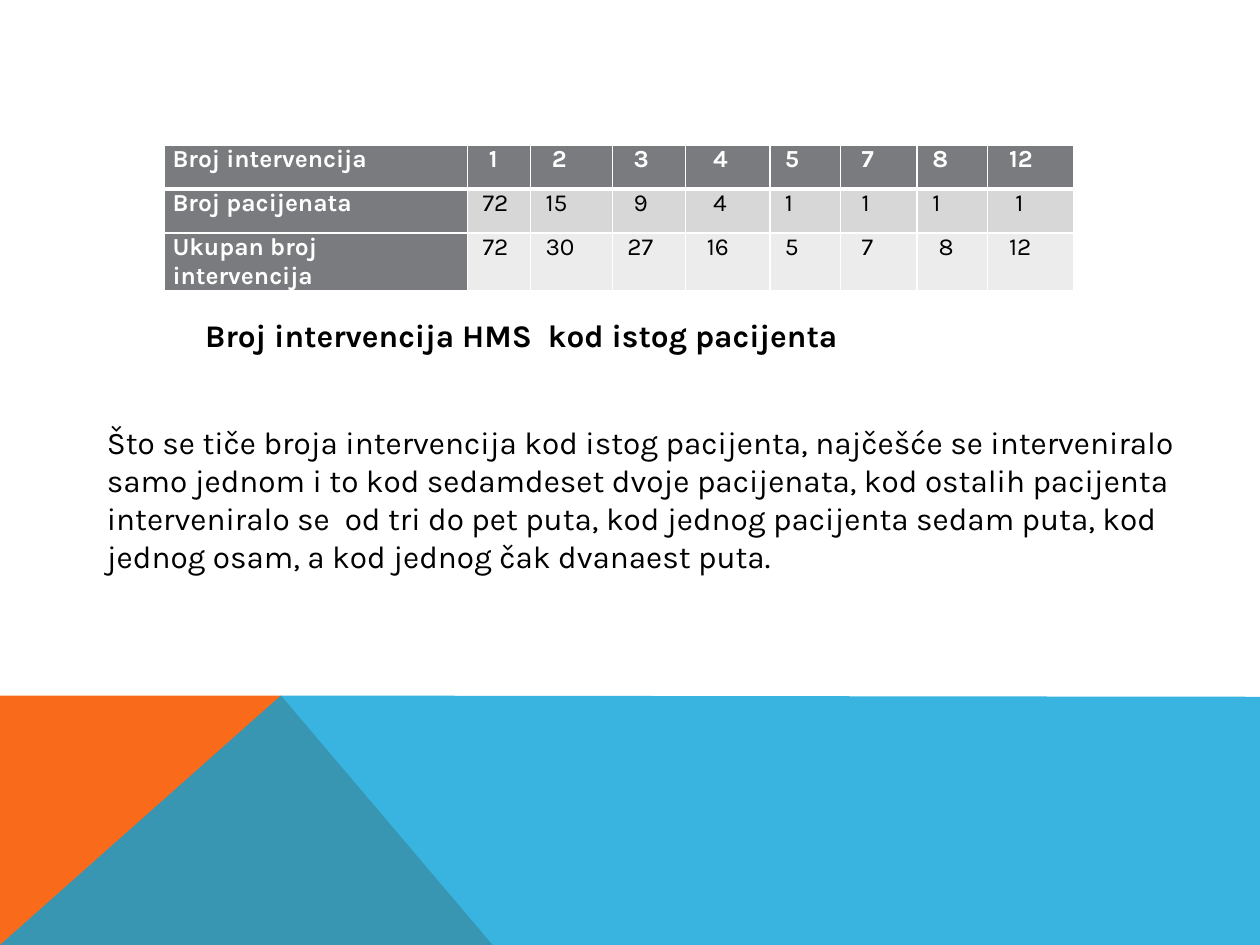
from dataclasses import dataclass

from lxml import etree
from pptx import Presentation, util as u
from pptx.dml.color import RGBColor
from pptx.enum import text as t
from pptx.oxml import ns

FONT = "Karla"
WHITE, BLACK, GREY = "FFFFFF", "000000", "797B7E"
INSET, STEP = 0.07, 0.05  # cell margin, and one step of indent


@dataclass
class Band:
    points: list[tuple[float, float]]
    color: str
    alpha: int = 100


@dataclass
class Row:
    label: str
    values: list[int]
    steps: list[int]
    height: float
    fill: str
    head: bool = False


BANDS = [
    Band([(0, 7.5), (0, 5.52), (2.23, 5.52), (3.91, 7.5)], "F96A1B"),
    Band([(0, 7.5), (2.23, 5.52), (10, 5.53), (10, 7.5)], "08A1D9", 80),
]
COLS = [2.41, 0.5, 0.65, 0.58, 0.67, 0.56, 0.61, 0.56, 0.68]
ROWS = [
    Row("Broj intervencija", [1, 2, 3, 4, 5, 7, 8, 12],
        [2, 2, 2, 3, 1, 2, 1, 2], 0.35, GREY, True),
    Row("Broj pacijenata", [72, 15, 9, 4, 1, 1, 1, 1],
        [1, 1, 2, 3, 1, 2, 1, 3], 0.35, "D7D7D8"),
    Row("Ukupan broj intervencija", [72, 30, 27, 16, 5, 7, 8, 12],
        [1, 1, 1, 2, 1, 2, 2, 2], 0.45, "ECECEC"),
]
TITLE = "Broj intervencija HMS  kod istog pacijenta"
BODY = (
    "Što se tiče broja intervencija kod istog pacijenta, najčešće se "
    "interveniralo samo jednom i to kod sedamdeset dvoje pacijenata, kod "
    "ostalih pacijenta interveniralo se  od tri do pet puta, kod jednog "
    "pacijenta sedam puta, kod jednog osam, a kod jednog čak dvanaest puta."
)


def paint(fill, color: str) -> None:
    fill.solid()
    fill.fore_color.rgb = RGBColor.from_string(color)


def write(frame, text: str, *, size: int = 18, color: str = BLACK,
          bold: bool = False) -> None:
    frame.word_wrap = True
    run = frame.paragraphs[0].add_run()
    run.text = text
    run.font.name, run.font.size, run.font.bold = FONT, u.Pt(size), bold
    paint(run.font.fill, color)


def draw_band(slide, band: Band) -> None:
    points = [(u.Inches(x), u.Inches(y)) for x, y in band.points]
    pen = slide.shapes.build_freeform(*points[0])
    pen.add_line_segments(points[1:], close=True)
    shape = pen.convert_to_shape()
    shape.shadow.inherit = False
    shape.line.fill.background()
    paint(shape.fill, band.color)
    if band.alpha < 100:
        color = shape._element.spPr.find(".//" + ns.qn("a:srgbClr"))
        etree.SubElement(color, ns.qn("a:alpha"), val=str(band.alpha * 1000))


def edge(cell, side: str, width: float) -> None:
    props = cell._tc.get_or_add_tcPr()
    line = etree.SubElement(props, ns.qn("a:ln" + side), w=str(u.Pt(width)))
    fill = etree.SubElement(line, ns.qn("a:solidFill"))
    etree.SubElement(fill, ns.qn("a:srgbClr"), val=WHITE)


def draw_cell(cell, text: str, fill: str, bold: bool, step: int,
              top: float, low: float) -> None:
    cell.margin_left = u.Inches(INSET + step * STEP)
    cell.margin_right = u.Inches(INSET)
    cell.margin_top = cell.margin_bottom = 0
    cell.vertical_anchor = t.MSO_ANCHOR.TOP
    write(cell.text_frame, text, size=14, bold=bold,
          color=WHITE if bold else BLACK)
    # Borders come before the fill in the cell properties
    for side, width in zip("LRTB", (1, 1, top, low)):
        edge(cell, side, width)
    paint(cell.fill, fill)


def draw_table(slide, rows: list[Row], left: float, top: float) -> None:
    table = slide.shapes.add_table(
        len(rows), len(COLS), u.Inches(left), u.Inches(top),
        u.Inches(sum(COLS)), u.Inches(sum(r.height for r in rows))).table
    table.first_row = table.horz_banding = False
    for col, width in zip(table.columns, COLS):
        col.width = u.Inches(width)
    for i, row in enumerate(rows):
        table.rows[i].height = u.Inches(row.height)
        top_line = 3 if i == 1 else 1
        low_line = 3 if row.head else 1
        draw_cell(table.cell(i, 0), row.label, GREY, True, 0,
                  top_line, low_line)
        for j, (value, step) in enumerate(zip(row.values, row.steps), 1):
            draw_cell(table.cell(i, j), str(value), row.fill, row.head, step,
                      top_line, low_line)


def draw_text(slide, text: str, left: float, top: float, width: float,
              height: float, **form) -> None:
    box = slide.shapes.add_textbox(*map(u.Inches, (left, top, width, height)))
    write(box.text_frame, text, **form)


def main() -> None:
    deck = Presentation()
    deck.slide_width, deck.slide_height = u.Inches(10), u.Inches(7.5)
    slide = deck.slides.add_slide(deck.slide_layouts[6])
    paint(slide.background.fill, WHITE)

    # Coloured bands at the foot
    for band in BANDS:
        draw_band(slide, band)

    # Table, its caption and the comment
    draw_table(slide, ROWS, 1.3, 1.15)
    draw_text(slide, TITLE, 1.53, 2.46, 5.71, 0.71, bold=True)
    draw_text(slide, BODY, 0.75, 3.31, 8.76, 1.31)

    deck.save("out.pptx")


if __name__ == "__main__":
    main()
